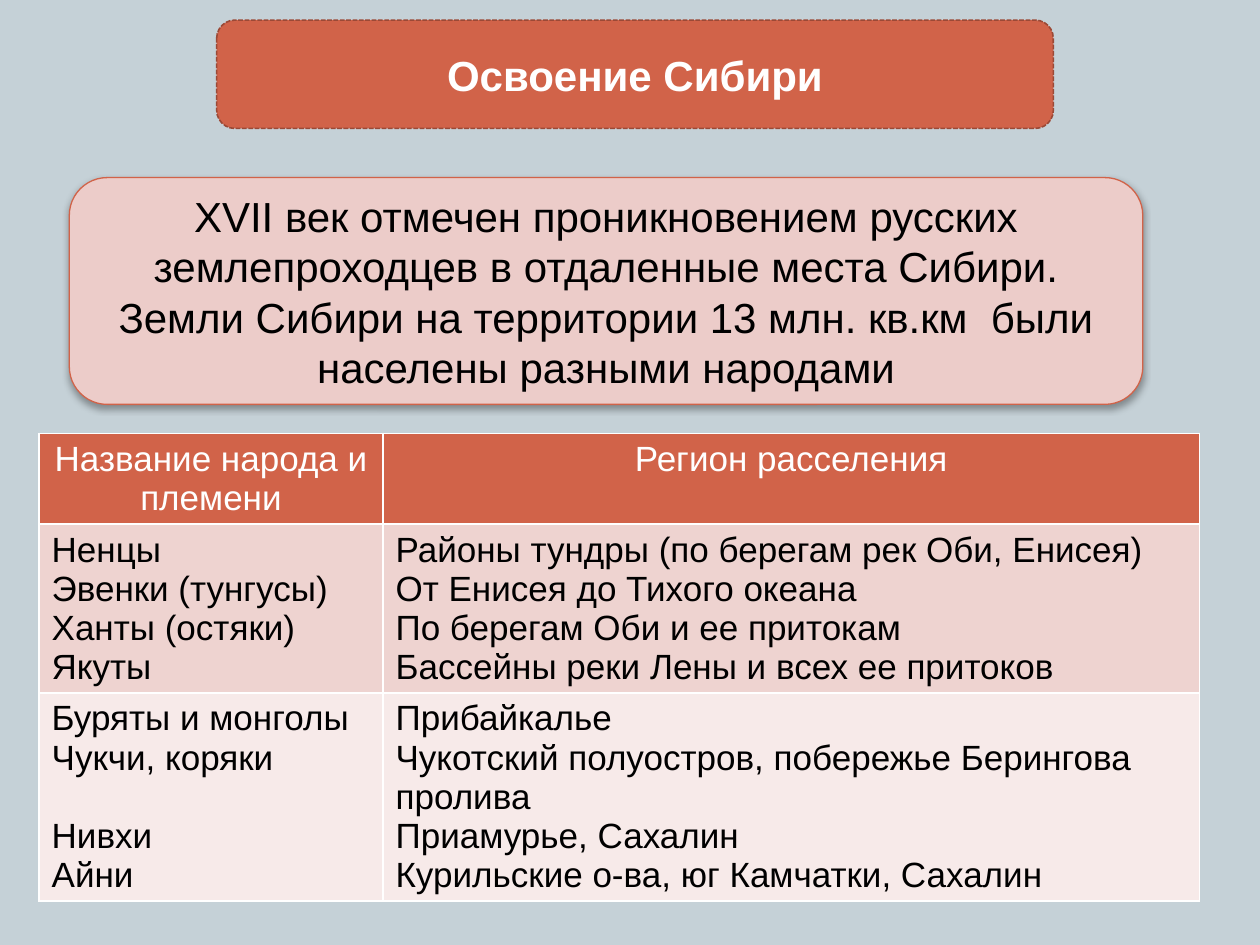
from lxml import etree
from pptx import Presentation
from pptx.dml.color import RGBColor
from pptx.enum.dml import MSO_LINE
from pptx.enum.shapes import MSO_SHAPE
from pptx.enum.text import MSO_ANCHOR, PP_ALIGN
from pptx.oxml.ns import qn
from pptx.util import Inches, Pt

ROUNDED = MSO_SHAPE.ROUNDED_RECTANGLE
DASH = MSO_LINE.SQUARE_DOT
CENTER, LEFT = PP_ALIGN.CENTER, PP_ALIGN.LEFT
MIDDLE = MSO_ANCHOR.MIDDLE

FONT = "Arial"
ACCENT, WHITE, BLACK = "D16349", "FFFFFF", "000000"
TITLE = "Освоение Сибири"
INTRO = ("XVII век отмечен проникновением русских землепроходцев в отдаленные места Сибири. "
         "Земли Сибири на территории 13 млн. кв.км  были населены разными народами")
HEADER = ("Название народа и племени", "Регион расселения")
NORTH = (
    ("Ненцы", "Районы тундры (по берегам рек Оби, Енисея)"),
    ("Эвенки (тунгусы)", "От Енисея до Тихого океана"),
    ("Ханты (остяки)", "По берегам Оби и ее притокам"),
    ("Якуты", "Бассейны реки Лены и всех ее притоков"),
)
EAST = (
    ("Буряты и монголы", "Прибайкалье"),
    ("Чукчи, коряки", "Чукотский полуостров, побережье Берингова пролива"),
    ("Нивхи", "Приамурье, Сахалин"),
    ("Айни", "Курильские о-ва, юг Камчатки, Сахалин"),
)
ROWS = (
    ([HEADER], 0.72, ACCENT, WHITE, CENTER),
    (NORTH, 1.34, "EED3D0", BLACK, LEFT),
    (EAST, 1.65, "F7EAE9", BLACK, LEFT),
)
COLUMN_WIDTHS = (2.73, 6.48)
TABLE_LEFT, TABLE_TOP = 0.31, 3.44
WRAPPED_LINE = Pt(22.3)


def color(value):
    return RGBColor.from_string(value)


def paint(filled, value):
    filled.fill.solid()
    filled.fill.fore_color.rgb = color(value)


def write(text_frame, text, size, text_color, align, bold=False):
    text_frame.text = text
    for paragraph in text_frame.paragraphs:
        paragraph.alignment = align
        for run in paragraph.runs:
            run.font.name = FONT
            run.font.size = Pt(size)
            run.font.bold = bold
            run.font.color.rgb = color(text_color)


def add_panel(slide, box, fill, line, line_width, text, text_color, bold=False):
    shape = slide.shapes.add_shape(ROUNDED, *map(Inches, box))
    shape.shadow.inherit = False
    paint(shape, fill)
    shape.line.color.rgb = color(line)
    shape.line.width = Pt(line_width)
    shape.text_frame.word_wrap = True
    shape.text_frame.vertical_anchor = MIDDLE
    write(shape.text_frame, text, 24, text_color, CENTER, bold)
    return shape


def add_shadow(shape):
    effects = shape._element.spPr.find(qn("a:effectLst"))
    shadow = etree.SubElement(effects, qn("a:outerShdw"), blurRad=str(Pt(4)),
                              dist=str(Pt(2)), dir="5400000", rotWithShape="0")
    shade = etree.SubElement(shadow, qn("a:srgbClr"), val=BLACK)
    etree.SubElement(shade, qn("a:alpha"), val="35000")


def add_peoples_table(slide):
    height = sum(row[1] for row in ROWS)
    frame = slide.shapes.add_table(
        len(ROWS), len(COLUMN_WIDTHS), Inches(TABLE_LEFT), Inches(TABLE_TOP),
        Inches(sum(COLUMN_WIDTHS)), Inches(height))
    table = frame.table
    for column, width in zip(table.columns, COLUMN_WIDTHS):
        column.width = Inches(width)
    for row, (entries, row_height, fill, text_color, align) in zip(table.rows, ROWS):
        row.height = Inches(row_height)
        for cell, lines in zip(row.cells, zip(*entries)):
            paint(cell, fill)
            write(cell.text_frame, "\n".join(lines), 20, text_color, align)
    peoples = table.cell(2, 0).text_frame.paragraphs
    peoples[1].space_after = WRAPPED_LINE


def main():
    presentation = Presentation()
    presentation.slide_width, presentation.slide_height = Inches(10), Inches(7.5)
    slide = presentation.slides.add_slide(presentation.slide_layouts[6])
    paint(slide.background, "C5D1D7")

    title = add_panel(slide, (1.72, 0.16, 6.64, 0.86), ACCENT, "9B4936", 0.9,
                      TITLE, WHITE, bold=True)
    title.line.dash_style = DASH
    intro = add_panel(slide, (0.55, 1.41, 8.52, 1.8), "ECCCC9", ACCENT, 0.75, INTRO, BLACK)
    add_shadow(intro)
    add_peoples_table(slide)
    presentation.save("out.pptx")


if __name__ == "__main__":
    main()
